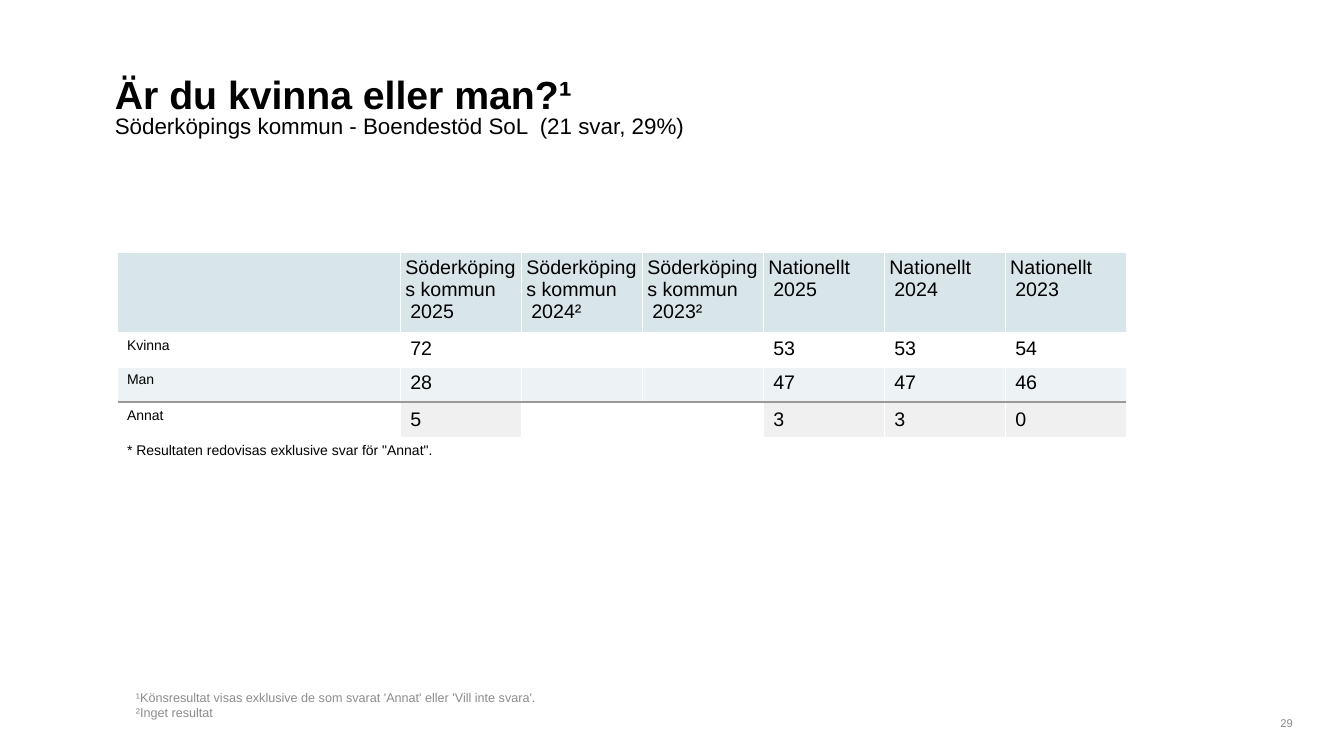
import pptx
import pptx.util
import pptx.dml.color
import pptx.enum.text
import pptx.oxml.ns
from lxml import etree

Inches = pptx.util.Inches
Pt = pptx.util.Pt
RGBColor = pptx.dml.color.RGBColor
Align = pptx.enum.text.PP_ALIGN
Anchor = pptx.enum.text.MSO_ANCHOR
qn = pptx.oxml.ns.qn

BLACK = RGBColor(0x00, 0x00, 0x00)
WHITE = RGBColor(0xFF, 0xFF, 0xFF)
HEADER_BLUE = RGBColor(0xD9, 0xE6, 0xE9)
BAND_BLUE = RGBColor(0xED, 0xF3, 0xF4)
OTHER_GREY = RGBColor(0xF0, 0xF0, 0xF0)
DIVIDER_GREY = RGBColor(0x99, 0x99, 0x99)
NOTE_GREY = RGBColor(0x8C, 0x8C, 0x8C)
NUMBER_GREY = RGBColor(0x89, 0x89, 0x89)

QUESTION = "Är du kvinna eller man?¹"
RESPONDENTS = "Söderköpings kommun - Boendestöd SoL  (21 svar, 29%)"
FOOTNOTES = [
    "¹Könsresultat visas exklusive de som svarat 'Annat' eller 'Vill inte svara'.",
    "²Inget resultat",
]
PAGE = "29"
KOMMUN = "Söderköpings kommun"
NATION = "Nationellt"
RESULTS = [
    ["", (KOMMUN, "2025"), (KOMMUN, "2024²"), (KOMMUN, "2023²"),
     (NATION, "2025"), (NATION, "2024"), (NATION, "2023")],
    ["Kvinna", "72", "", "", "53", "53", "54"],
    ["Man", "28", "", "", "47", "47", "46"],
    [""] * 7,
    ["Annat", "5", "", "", "3", "3", "0"],
    ['* Resultaten redovisas exklusive svar för "Annat".'] + [""] * 6,
]
ROW_FILLS = [HEADER_BLUE, None, BAND_BLUE, DIVIDER_GREY, OTHER_GREY, None]
ROW_HEIGHTS = [0.8, 0.34, 0.34, 0.02, 0.34, 0.26]
COLUMN_WIDTHS = [2.81] + [1.2] * 6
DIVIDER, OTHER = 3, 4
MERGED_ROWS = (DIVIDER, 5)


def write(frame, lines, size, color, bold=False, align=Align.LEFT):
    frame.word_wrap = True
    frame.text = "\n".join(lines)
    for paragraph in frame.paragraphs:
        paragraph.alignment = align
        paragraph.font.name = "Arial"
        paragraph.font.size = Pt(size)
        paragraph.font.bold = bold
        paragraph.font.color.rgb = color


def add_text(slide, box, lines, size, color, anchor, align=Align.LEFT):
    frame = slide.shapes.add_textbox(*map(Inches, box)).text_frame
    frame.vertical_anchor = anchor
    write(frame, lines, size, color, align=align)


def set_borders(cell, row):
    properties = cell._tc.get_or_add_tcPr()
    bare = {"lnT": row in (DIVIDER, OTHER), "lnB": row in (DIVIDER - 1, DIVIDER)}
    for position, side in enumerate(("lnL", "lnR", "lnT", "lnB")):
        line = etree.Element(qn("a:" + side), w=str(Pt(1)))
        if bare.get(side):
            etree.SubElement(line, qn("a:noFill"))
        else:
            fill = etree.SubElement(line, qn("a:solidFill"))
            etree.SubElement(fill, qn("a:srgbClr"), val=str(WHITE))
        properties.insert(position, line)


def fill_cell(cell, row, column, content):
    inset = Inches(0 if row == DIVIDER else 0.05)
    cell.margin_left = cell.margin_right = inset
    cell.margin_top = cell.margin_bottom = inset
    lines = content if isinstance(content, tuple) else (content,)
    write(cell.text_frame, lines, 10 if column == 0 else 14, BLACK)
    last = cell.text_frame.paragraphs[-1]
    if content:
        last._p.get_or_add_pPr().set("marL", str(Inches(0.05)))
    else:
        last.font.size = Pt(1)
        etree.SubElement(last._p, qn("a:endParaRPr"), sz="100")
    color = ROW_FILLS[row]
    if color is None or (row == OTHER and (column == 0 or not content)):
        cell.fill.background()
    else:
        cell.fill.solid()
        cell.fill.fore_color.rgb = color
    set_borders(cell, row)


def add_results(slide):
    table = slide.shapes.add_table(
        len(RESULTS), len(COLUMN_WIDTHS), Inches(1.16), Inches(2.5),
        Inches(sum(COLUMN_WIDTHS)), Inches(sum(ROW_HEIGHTS))).table
    table.first_row = table.horz_banding = False
    for column, width in zip(table.columns, COLUMN_WIDTHS):
        column.width = Inches(width)
    for row, height in zip(table.rows, ROW_HEIGHTS):
        row.height = Inches(height)
    for row, contents in enumerate(RESULTS):
        for column, content in enumerate(contents):
            fill_cell(table.cell(row, column), row, column, content)
    for row in MERGED_ROWS:
        table.cell(row, 0).merge(table.cell(row, len(COLUMN_WIDTHS) - 1))


def main():
    deck = pptx.Presentation()
    deck.slide_width, deck.slide_height = Inches(13.33), Inches(7.5)
    slide = deck.slides.add_slide(deck.slide_layouts[5])

    title = slide.shapes.title
    title.left, title.top = Inches(1.04), Inches(0.65)
    title.width, title.height = Inches(11.25), Inches(0.42)
    title.text_frame.auto_size = pptx.enum.text.MSO_AUTO_SIZE.NONE
    title.text_frame.vertical_anchor = Anchor.TOP
    write(title.text_frame, [QUESTION], 28, BLACK, bold=True)

    add_text(slide, (1.04, 1.06, 11.25, 0.42), [RESPONDENTS], 16, BLACK, Anchor.TOP)
    add_results(slide)
    add_text(slide, (1.25, 6.7, 7.6, 0.49), FOOTNOTES, 9, NOTE_GREY, Anchor.BOTTOM)
    add_text(slide, (12.5, 7.08, 0.42, 0.21), [PAGE], 8, NUMBER_GREY,
             Anchor.BOTTOM, Align.RIGHT)
    deck.save("out.pptx")


if __name__ == "__main__":
    main()
